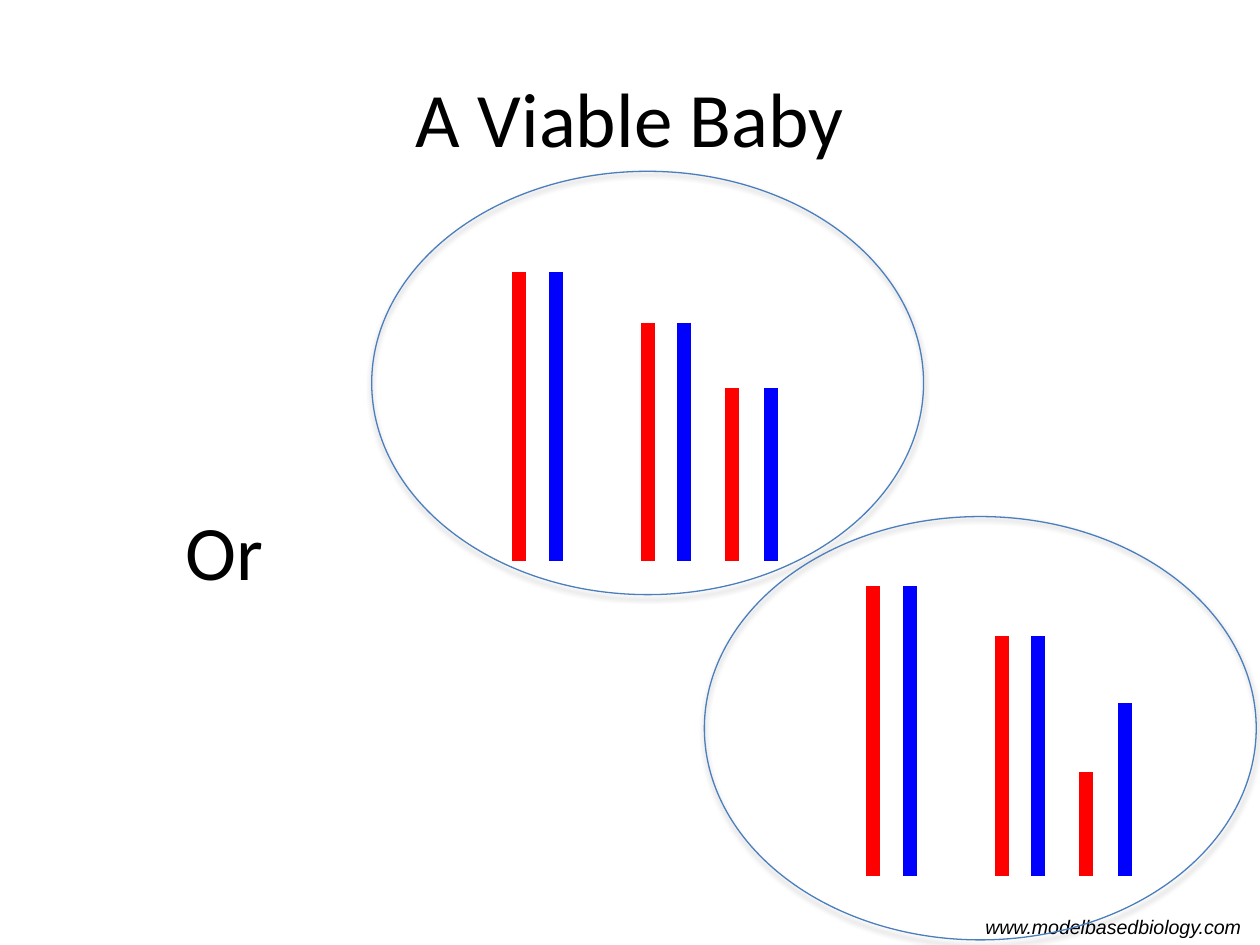
from dataclasses import dataclass

from lxml.etree import SubElement
from pptx import Presentation
from pptx.dml.color import RGBColor
from pptx.enum.shapes import MSO_CONNECTOR, MSO_SHAPE
from pptx.enum.text import MSO_ANCHOR, PP_ALIGN
from pptx.oxml.ns import qn
from pptx.slide import Slide
from pptx.util import Inches, Pt

BLACK = RGBColor(0x00, 0x00, 0x00)
RED = RGBColor(0xFF, 0x00, 0x00)
BLUE = RGBColor(0x00, 0x00, 0xFF)
OUTLINE = RGBColor(0x4B, 0x7E, 0xBC)

CELL_W, CELL_H = 4.38, 3.36
PAIR_OFFSETS = ((0, 0.29), (1.02, 1.31), (1.69, 2.0))


@dataclass
class Label:
    text: str
    left: float
    top: float
    width: float
    height: float
    size: float = 44
    font: str = "Calibri"
    italic: bool = False
    wrap: bool = True
    margin: float = 0.1


@dataclass
class Cell:
    left: float
    top: float
    first_x: float
    base: float
    pair_lengths: tuple[tuple[float, float], ...]


LABELS = (
    Label("www.modelbasedbiology.com", 7.75, 7.22, 2.17, 0.27, 11.2, "Arial",
          italic=True, wrap=False, margin=0.04),
    Label("A Viable Baby", 0.5, 0.3, 9, 1.25),
    Label("Or", 0.78, 3.74, 2, 1.25),
)
CELLS = (
    Cell(2.95, 1.36, 4.12, 4.45, ((2.29, 2.29), (1.89, 1.89), (1.37, 1.37))),
    Cell(5.59, 4.1, 6.93, 6.95, ((2.3, 2.3), (1.9, 1.9), (0.82, 1.37))),
)


def add_label(s: Slide, label: Label) -> None:
    """Add a centred line of text."""
    sp = s.shapes.add_textbox(Inches(label.left), Inches(label.top),
                              Inches(label.width), Inches(label.height))
    tf = sp.text_frame
    tf.word_wrap = label.wrap
    tf.vertical_anchor = MSO_ANCHOR.MIDDLE
    tf.margin_left = tf.margin_right = Inches(label.margin)
    tf.margin_top = tf.margin_bottom = Inches(min(label.margin, 0.05))
    tf.text = label.text
    p = tf.paragraphs[0]
    p.alignment = PP_ALIGN.CENTER
    font = p.runs[0].font
    font.name, font.size, font.italic = label.font, Pt(label.size), label.italic
    font.color.rgb = BLACK


def add_chromosome(s: Slide, x: float, base: float, length: float,
                   color: RGBColor) -> None:
    """Add a thick vertical line standing on the base."""
    line = s.shapes.add_connector(MSO_CONNECTOR.STRAIGHT, Inches(x),
                                  Inches(base - length), Inches(x), Inches(base))
    line.line.color.rgb = color
    line.line.width = Pt(8)
    SubElement(line._element.spPr, qn("a:effectLst"))


def add_membrane(s: Slide, cell: Cell) -> None:
    """Add the cell outline with its soft shadow."""
    sp = s.shapes.add_shape(MSO_SHAPE.OVAL, Inches(cell.left), Inches(cell.top),
                            Inches(CELL_W), Inches(CELL_H))
    sp.fill.background()
    sp.line.color.rgb = OUTLINE
    sp.line.width = Pt(0.75)
    sp.shadow.inherit = False
    effects = sp._element.spPr.find(qn("a:effectLst"))
    shadow = SubElement(effects, qn("a:outerShdw"), blurRad=str(Pt(3.1)),
                        dist=str(Pt(1.8)), dir="5400000", rotWithShape="0")
    color = SubElement(shadow, qn("a:srgbClr"), val=str(BLACK))
    SubElement(color, qn("a:alpha"), val="35000")


def main() -> None:
    """Build the slide and save it."""
    prs = Presentation()
    prs.slide_width, prs.slide_height = Inches(10), Inches(7.5)
    s = prs.slides.add_slide(prs.slide_layouts[6])
    for label in LABELS:
        add_label(s, label)
    for cell in CELLS:
        for offsets, lengths in zip(PAIR_OFFSETS, cell.pair_lengths):
            for offset, length, color in zip(offsets, lengths, (RED, BLUE)):
                add_chromosome(s, cell.first_x + offset, cell.base, length, color)
    for cell in CELLS:
        add_membrane(s, cell)
    prs.save("out.pptx")


if __name__ == "__main__":
    main()
